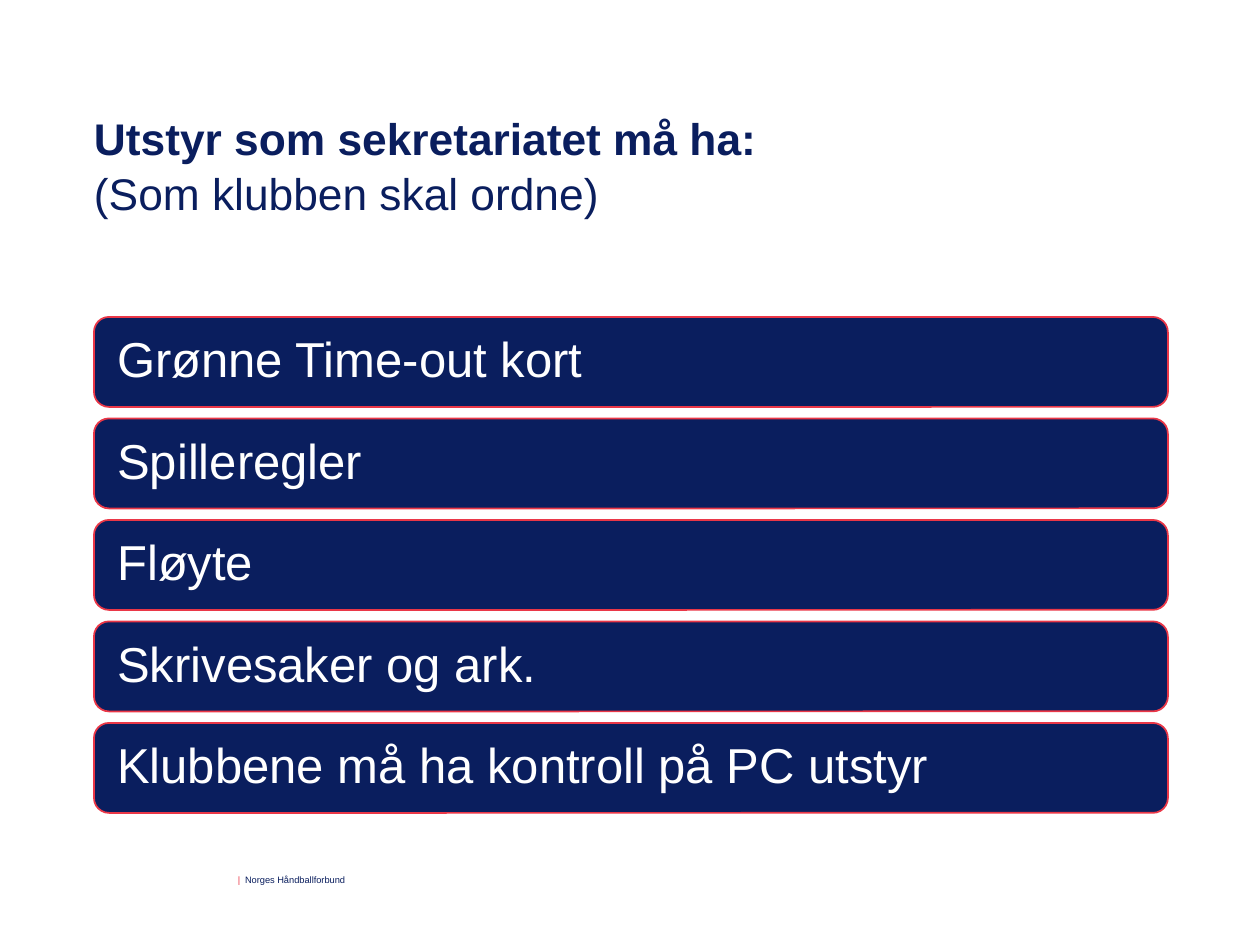
"""Builds a slide listing the equipment a handball secretariat needs."""
from dataclasses import dataclass

from pptx import Presentation
from pptx.dml.color import RGBColor
from pptx.enum.shapes import MSO_SHAPE
from pptx.enum.text import MSO_ANCHOR, PP_ALIGN
from pptx.util import Emu, Pt

ROUNDED = MSO_SHAPE.ROUNDED_RECTANGLE
TOP, MIDDLE = MSO_ANCHOR.TOP, MSO_ANCHOR.MIDDLE
LEFT = PP_ALIGN.LEFT
EMU_PER_PX = 914400 // 126


@dataclass(frozen=True)
class Theme:
    font: str = "Arial"
    navy: RGBColor = RGBColor(0x0A, 0x1E, 0x5E)
    red: RGBColor = RGBColor(0xEA, 0x37, 0x47)
    white: RGBColor = RGBColor(0xFF, 0xFF, 0xFF)
    title_size: float = 25.3
    item_size: float = 28
    footer_size: float = 5.3


THEME = Theme()
SLIDE_SIZE = (1260, 945)
TITLE_BOX = (94, 106, 1072, 144)
TITLE = [("Utstyr som sekretariatet må ha:", True), ("(Som klubben skal ordne)", False)]
LIST_BOX = (94, 317, 1074, 496)
BAR_HEIGHT = 90
ITEMS = [
    "Grønne Time-out kort",
    "Spilleregler",
    "Fløyte",
    "Skrivesaker og ark.",
    "Klubbene må ha kontroll på PC utstyr",
]
FOOTER = [
    ("Norges Håndballforbund", (245, 874, 118, 11), THEME.navy),
    ("|", (238, 874, 3, 11), THEME.red),
]


def px(n):
    return Emu(round(n * EMU_PER_PX))


def set_frame(tf, anchor, side=0, top=0, wrap=True):
    tf.margin_left = tf.margin_right = px(side)
    tf.margin_top, tf.margin_bottom = px(top), 0
    tf.vertical_anchor = anchor
    tf.word_wrap = wrap


def set_text(p, text, size, color, bold=False):
    p.text = text
    p.alignment = LEFT
    p.font.name, p.font.size, p.font.bold = THEME.font, Pt(size), bold
    p.font.color.rgb = color


def add_title(s):
    tf = s.shapes.add_textbox(*map(px, TITLE_BOX)).text_frame
    set_frame(tf, TOP, top=3)
    for i, (text, bold) in enumerate(TITLE):
        p = tf.add_paragraph() if i else tf.paragraphs[0]
        set_text(p, text, THEME.title_size, THEME.navy, bold)
        p.line_spacing = 1.04


def add_bars(s):
    left, top, width, height = LIST_BOX
    pitch = (height - BAR_HEIGHT) / (len(ITEMS) - 1)
    for i, text in enumerate(ITEMS):
        box = (left, top + i * pitch, width, BAR_HEIGHT)
        sp = s.shapes.add_shape(ROUNDED, *map(px, box))
        sp.shadow.inherit = False
        sp.fill.solid()
        sp.fill.fore_color.rgb = THEME.navy
        sp.line.color.rgb = THEME.red
        sp.line.width = Pt(1)
        set_frame(sp.text_frame, MIDDLE, side=19)
        p = sp.text_frame.paragraphs[0]
        set_text(p, text, THEME.item_size, THEME.white)
        p.line_spacing = 0.9


def add_footer(s):
    for text, box, color in FOOTER:
        tf = s.shapes.add_textbox(*map(px, box)).text_frame
        set_frame(tf, TOP, wrap=False)
        set_text(tf.paragraphs[0], text, THEME.footer_size, color)


def main():
    prs = Presentation()
    prs.slide_width, prs.slide_height = map(px, SLIDE_SIZE)
    s = prs.slides.add_slide(prs.slide_layouts[6])
    add_footer(s)
    add_title(s)
    add_bars(s)
    prs.save("out.pptx")


if __name__ == "__main__":
    main()
